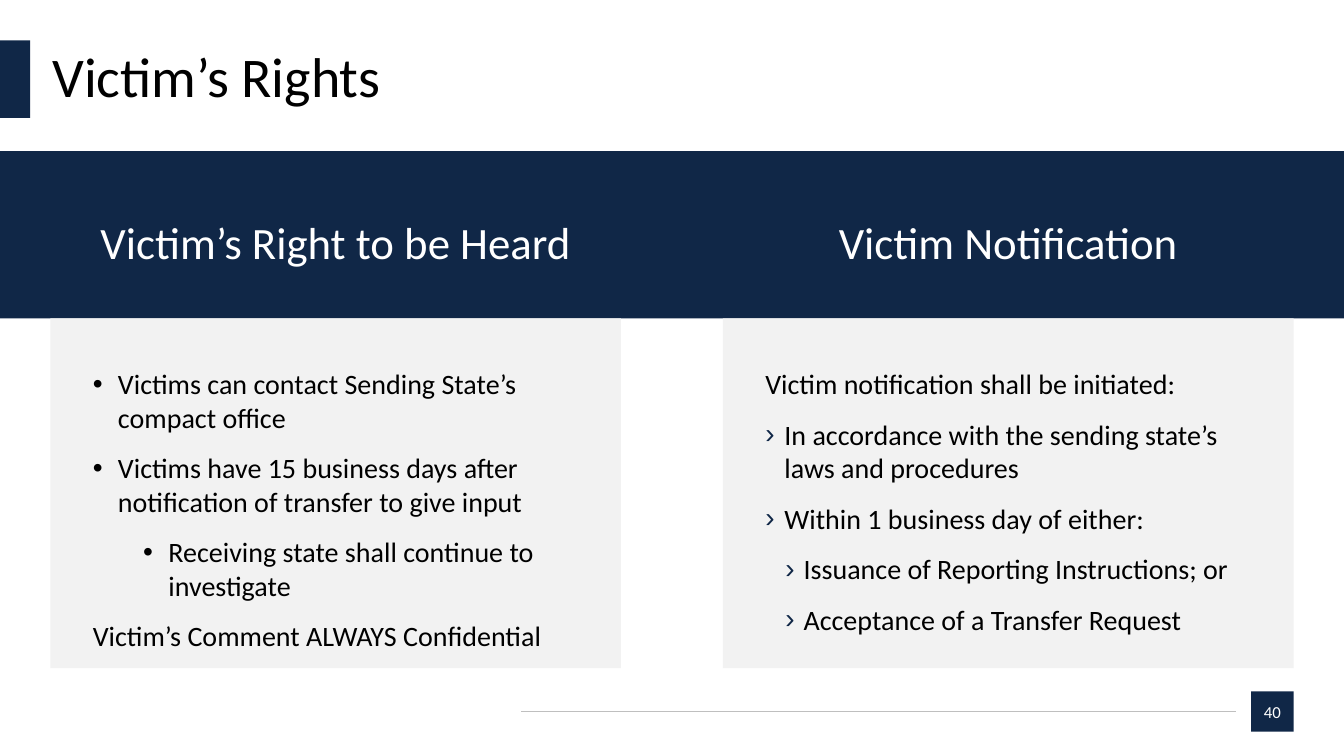
from lxml import etree
from pptx import Presentation
from pptx.dml.color import RGBColor
from pptx.enum.shapes import MSO_CONNECTOR, MSO_SHAPE
from pptx.enum.text import MSO_ANCHOR, PP_ALIGN
from pptx.oxml.ns import qn
from pptx.util import Inches, Pt

RECT = MSO_SHAPE.RECTANGLE
STRAIGHT = MSO_CONNECTOR.STRAIGHT
TOP, MIDDLE = MSO_ANCHOR.TOP, MSO_ANCHOR.MIDDLE
LEFT, CENTER = PP_ALIGN.LEFT, PP_ALIGN.CENTER

SLIDE_W, SLIDE_H = 13.33, 7.5
MARGIN = 0.5
PANEL_W = 5.66
PAD = 0.42
BAND_TOP, BAND_H = 1.5, 1.66
NAVY, GREY, RULE, BLACK, WHITE = "102747", "F2F2F2", "BFBFBF", "000000", "FFFFFF"

# Each line: text, bullet, bullet colour, left margin, hanging indent, level
HEARD = [
    ("Victims can contact Sending State’s compact office", "•", BLACK, 0.25, 0.25, 0),
    ("Victims have 15 business days after notification of transfer to give input",
     "•", BLACK, 0.25, 0.25, 0),
    ("Receiving state shall continue to investigate", "•", BLACK, 0.75, 0.25, 1),
    ("Victim’s Comment ALWAYS Confidential", None, None, 0, 0, 0),
]
NOTIFICATION = [
    ("Victim notification shall be initiated:", None, None, 0, 0, 0),
    ("In accordance with the sending state’s laws and procedures", "›", NAVY, 0.19, 0.19, 0),
    ("Within 1 business day of either:", "›", NAVY, 0.19, 0.19, 0),
    ("Issuance of Reporting Instructions; or", "›", NAVY, 0.38, 0.18, 1),
    ("Acceptance of a Transfer Request", "›", NAVY, 0.38, 0.18, 1),
]


def rgb(value):
    return RGBColor.from_string(value)


def add_rect(slide, x, y, w, h, fill):
    sp = slide.shapes.add_shape(RECT, Inches(x), Inches(y), Inches(w), Inches(h))
    sp.shadow.inherit = False
    sp.fill.solid()
    sp.fill.fore_color.rgb = rgb(fill)
    sp.line.fill.background()
    return sp


def format_paragraph(p, text, size, color, align):
    p.text = text
    p.alignment = align
    for r in p.runs:
        r.font.name = "Calibri"
        r.font.size = Pt(size)
        r.font.color.rgb = rgb(color)


def add_text_frame(slide, x, y, w, h, anchor=TOP):
    """Add a wrapping text box without insets and return its frame."""
    tf = slide.shapes.add_textbox(Inches(x), Inches(y), Inches(w), Inches(h)).text_frame
    tf.word_wrap = True
    tf.vertical_anchor = anchor
    tf.margin_left = tf.margin_right = tf.margin_top = tf.margin_bottom = 0
    return tf


def add_bullet(p, char, color, margin, hanging):
    pPr = p._p.get_or_add_pPr()
    pPr.set("marL", str(Inches(margin)))
    pPr.set("indent", str(-Inches(hanging)))
    clr = etree.SubElement(pPr, qn("a:buClr"))
    etree.SubElement(clr, qn("a:srgbClr")).set("val", color)
    etree.SubElement(pPr, qn("a:buFont")).set("typeface", "Arial")
    etree.SubElement(pPr, qn("a:buChar")).set("char", char)


def add_title(slide, x, y, w, h):
    add_rect(slide, 0, y, 0.3, h, NAVY)
    tf = add_text_frame(slide, x, y, w, h, MIDDLE)
    p = tf.paragraphs[0]
    format_paragraph(p, "Victim’s Rights", 40, BLACK, LEFT)
    p.line_spacing = 0.9


def add_column(slide, x, y, w, h, heading, lines):
    """Place a heading on the band above the box and a bulleted panel in it."""
    add_rect(slide, x, y, w, h, GREY)
    inner_x, inner_w = x + PAD, w - 2 * PAD
    heading_h = 0.54
    tf = add_text_frame(slide, inner_x, y - BAND_H + 0.63, inner_w, heading_h)
    format_paragraph(tf.paragraphs[0], heading, 32, WHITE, CENTER)

    tf = add_text_frame(slide, inner_x, y + 0.48, inner_w, h - 0.61)
    for i, (text, char, color, margin, hanging, level) in enumerate(lines):
        p = tf.add_paragraph() if i else tf.paragraphs[0]
        p.level = level
        p.space_after = Pt(12)
        if char:
            add_bullet(p, char, color, margin, hanging)
        format_paragraph(p, text, 20, BLACK, LEFT)


def add_footer(slide, right, y, h):
    """Place the page number against the right edge, with a rule to its left."""
    box_w = 0.42
    sp = add_rect(slide, right - box_w, y, box_w, h, NAVY)
    tf = sp.text_frame
    tf.word_wrap = False
    tf.vertical_anchor = MIDDLE
    format_paragraph(tf.paragraphs[0], "40", 12, WHITE, CENTER)

    line_y = Inches(y + h / 2)
    line = slide.shapes.add_connector(
        STRAIGHT, Inches(5.17), line_y, Inches(right - box_w - 0.15), line_y)
    line.line.color.rgb = rgb(RULE)
    line.line.width = Pt(0.5)
    etree.SubElement(line._element.spPr, qn("a:effectLst"))


def main():
    prs = Presentation()
    prs.slide_width, prs.slide_height = Inches(SLIDE_W), Inches(SLIDE_H)
    slide = prs.slides.add_slide(prs.slide_layouts[6])
    right = SLIDE_W - MARGIN

    add_title(slide, 0.52, 0.4, 12.31, 0.77)
    add_rect(slide, 0, BAND_TOP, SLIDE_W, BAND_H, NAVY)
    panel_top, panel_h = BAND_TOP + BAND_H, 3.47
    add_column(slide, MARGIN, panel_top, PANEL_W, panel_h,
               "Victim’s Right to be Heard", HEARD)
    add_column(slide, right - PANEL_W, panel_top, PANEL_W, panel_h,
               "Victim Notification", NOTIFICATION)
    add_footer(slide, right, 6.86, 0.4)
    prs.save("out.pptx")


if __name__ == "__main__":
    main()
